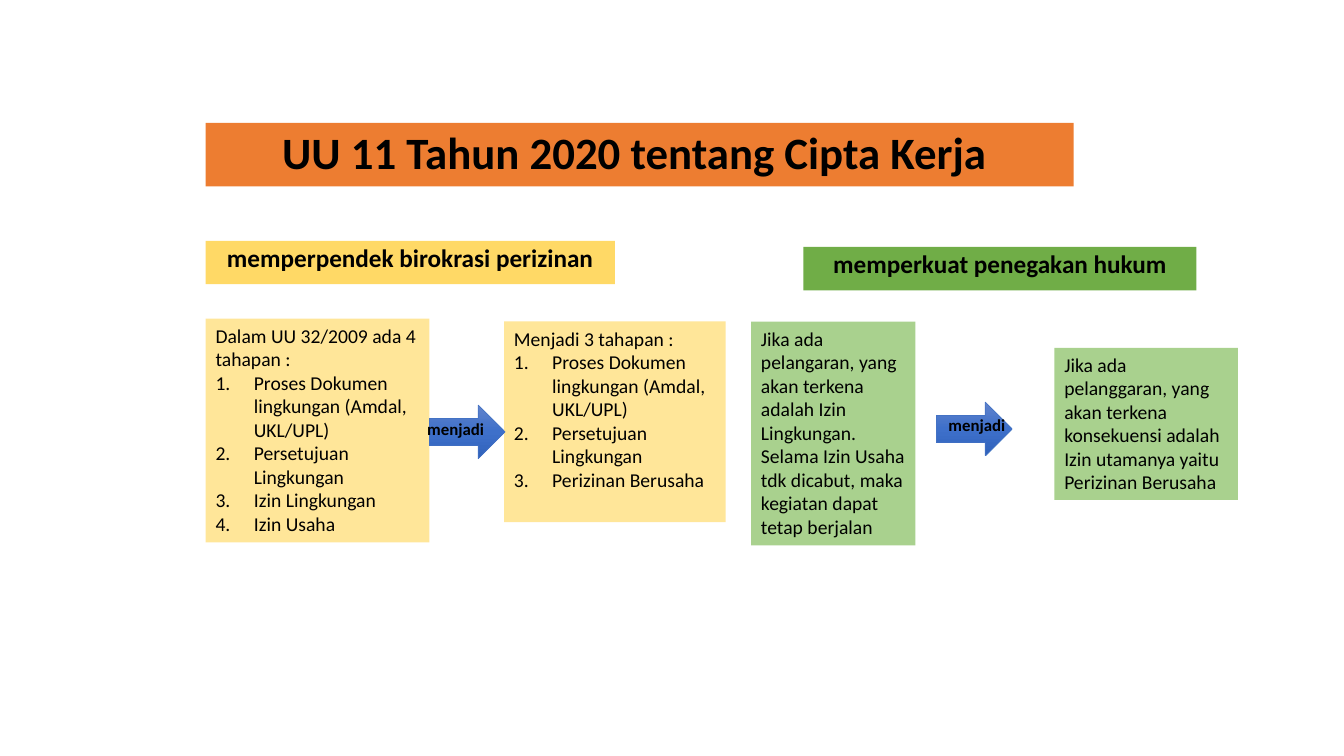
from copy import deepcopy
from dataclasses import dataclass, field

from lxml.etree import SubElement
from pptx import Presentation
from pptx.dml.color import RGBColor
from pptx.enum.shapes import MSO_SHAPE as Preset
from pptx.enum.text import MSO_ANCHOR as Anchor, PP_ALIGN as Align
from pptx.oxml.ns import qn
from pptx.util import Inches, Pt

SLIDE_WIDTH, SLIDE_HEIGHT = Inches(13.33), Inches(7.5)
LIST_INDENT = Inches(0.38)
ARROW_STOPS = ((0, "6183CB"), (0.5, "3E70CA"), (1, "3062BB"))
BODY_FONT = {"size": Pt(14), "bold": False}
LABEL_FONT = {"size": Pt(12), "bold": True}
HEADING_FONT = {"size": Pt(18), "bold": True}
TITLE_FONT = {"size": Pt(32), "bold": True}
HEADING_LAYOUT = {"alignment": Align.CENTER, "line_spacing": 0.9}
TITLE_LAYOUT = {"alignment": Align.LEFT, "line_spacing": 0.9}
BODY_LAYOUT = {"alignment": Align.LEFT}


@dataclass
class Area:
    """Percentages of the slide's width and height."""
    left: float
    top: float
    width: float
    height: float

    def place(self) -> tuple[int, int, int, int]:
        return (int(SLIDE_WIDTH * self.left / 100), int(SLIDE_HEIGHT * self.top / 100),
                int(SLIDE_WIDTH * self.width / 100), int(SLIDE_HEIGHT * self.height / 100))


@dataclass
class Panel:
    area: Area
    fill: str
    text: str
    steps: list[str] = field(default_factory=list)
    font: dict = field(default_factory=lambda: BODY_FONT)
    layout: dict = field(default_factory=lambda: BODY_LAYOUT)
    frame: dict = field(default_factory=dict)


@dataclass
class Transition:
    arrow: Area
    label: Area
    text: str = "menjadi"


TITLE = Panel(Area(15.3, 16.27, 64.58, 8.4), "ED7D31", "UU 11 Tahun 2020 tentang Cipta Kerja",
              font=TITLE_FONT, layout=TITLE_LAYOUT,
              frame={"vertical_anchor": Anchor.MIDDLE, "margin_left": Inches(0.76)})
HEADINGS = [
    Panel(Area(15.3, 31.87, 30.45, 5.73), "FFD966", "memperpendek birokrasi perizinan",
          font=HEADING_FONT, layout=HEADING_LAYOUT),
    Panel(Area(59.78, 32.67, 29.25, 5.73), "70AD47", "memperkuat penegakan hukum",
          font=HEADING_FONT, layout=HEADING_LAYOUT),
]
FIRST_STEPS = ["Proses Dokumen lingkungan (Amdal, UKL/UPL)", "Persetujuan Lingkungan"]
DETAILS = [
    Panel(Area(15.3, 42.13, 16.65, 29.6), "FFE699", "Dalam UU 32/2009 ada 4 tahapan :",
          FIRST_STEPS + ["Izin Lingkungan", "Izin Usaha"]),
    Panel(Area(37.5, 42.53, 16.5, 26.53), "FFE699", "Menjadi 3 tahapan :",
          FIRST_STEPS + ["Perizinan Berusaha"]),
    Panel(Area(55.88, 42.53, 12.23, 29.6), "A9D18E",
          "Jika ada pelangaran, yang akan terkena adalah Izin Lingkungan. "
          "Selama Izin Usaha tdk dicabut, maka kegiatan dapat tetap berjalan"),
    Panel(Area(78.45, 46, 13.65, 20.13), "A9D18E",
          "Jika ada pelanggaran, yang akan terkena konsekuensi adalah "
          "Izin utamanya yaitu Perizinan Berusaha"),
]
TRANSITIONS = [
    Transition(Area(31.95, 53.6, 5.63, 7.07), Area(31.05, 54.8, 6.53, 4)),
    Transition(Area(69.68, 53.2, 5.63, 7.07), Area(69.83, 54.27, 6.53, 4)),
]


def colour(value: str) -> RGBColor:
    return RGBColor.from_string(value)


def apply(target, values: dict) -> None:
    for name, value in values.items():
        setattr(target, name, value)


def write(para, text: str, font: dict, layout: dict) -> None:
    apply(para, layout)
    span = para.add_run()
    span.text = text
    apply(span.font, {"name": "Calibri", **font})
    span.font.color.rgb = colour("000000")


def number(para) -> None:
    properties = para._p.get_or_add_pPr()
    properties.set("marL", str(LIST_INDENT))
    properties.set("indent", str(-LIST_INDENT))
    SubElement(properties, qn("a:buFont"), typeface="+mj-lt")
    SubElement(properties, qn("a:buAutoNum"), type="arabicPeriod")


def draw_panel(page, panel: Panel) -> None:
    box = page.shapes.add_shape(Preset.RECTANGLE, *panel.area.place())
    box.shadow.inherit = False
    box.fill.solid()
    box.fill.fore_color.rgb = colour(panel.fill)
    box.line.fill.background()
    frame = box.text_frame
    apply(frame, {"word_wrap": True, "vertical_anchor": Anchor.TOP, **panel.frame})
    write(frame.paragraphs[0], panel.text, panel.font, panel.layout)
    for step in panel.steps:
        para = frame.add_paragraph()
        write(para, step, panel.font, panel.layout)
        number(para)


def draw_transition(page, transition: Transition) -> None:
    arrow = page.shapes.add_shape(Preset.RIGHT_ARROW, *transition.arrow.place())
    arrow.shadow.inherit = False
    arrow.line.color.rgb = colour("4472C4")
    arrow.line.width = Pt(0.5)
    arrow.fill.gradient()
    arrow.fill.gradient_angle = 270
    stop_list = arrow._element.spPr.find(".//" + qn("a:gsLst"))
    stop_list.append(deepcopy(stop_list[-1]))
    for stop, (position, value) in zip(arrow.fill.gradient_stops, ARROW_STOPS):
        stop.position = position
        stop.color.rgb = colour(value)
    label = page.shapes.add_textbox(*transition.label.place())
    label.text_frame.word_wrap = False
    write(label.text_frame.paragraphs[0], transition.text, LABEL_FONT, BODY_LAYOUT)


def main() -> None:
    deck = Presentation()
    apply(deck, {"slide_width": SLIDE_WIDTH, "slide_height": SLIDE_HEIGHT})
    page = deck.slides.add_slide(deck.slide_layouts[6])
    for panel in [TITLE, *HEADINGS, *DETAILS]:
        draw_panel(page, panel)
    for transition in TRANSITIONS:
        draw_transition(page, transition)
    deck.save("out.pptx")


if __name__ == "__main__":
    main()
